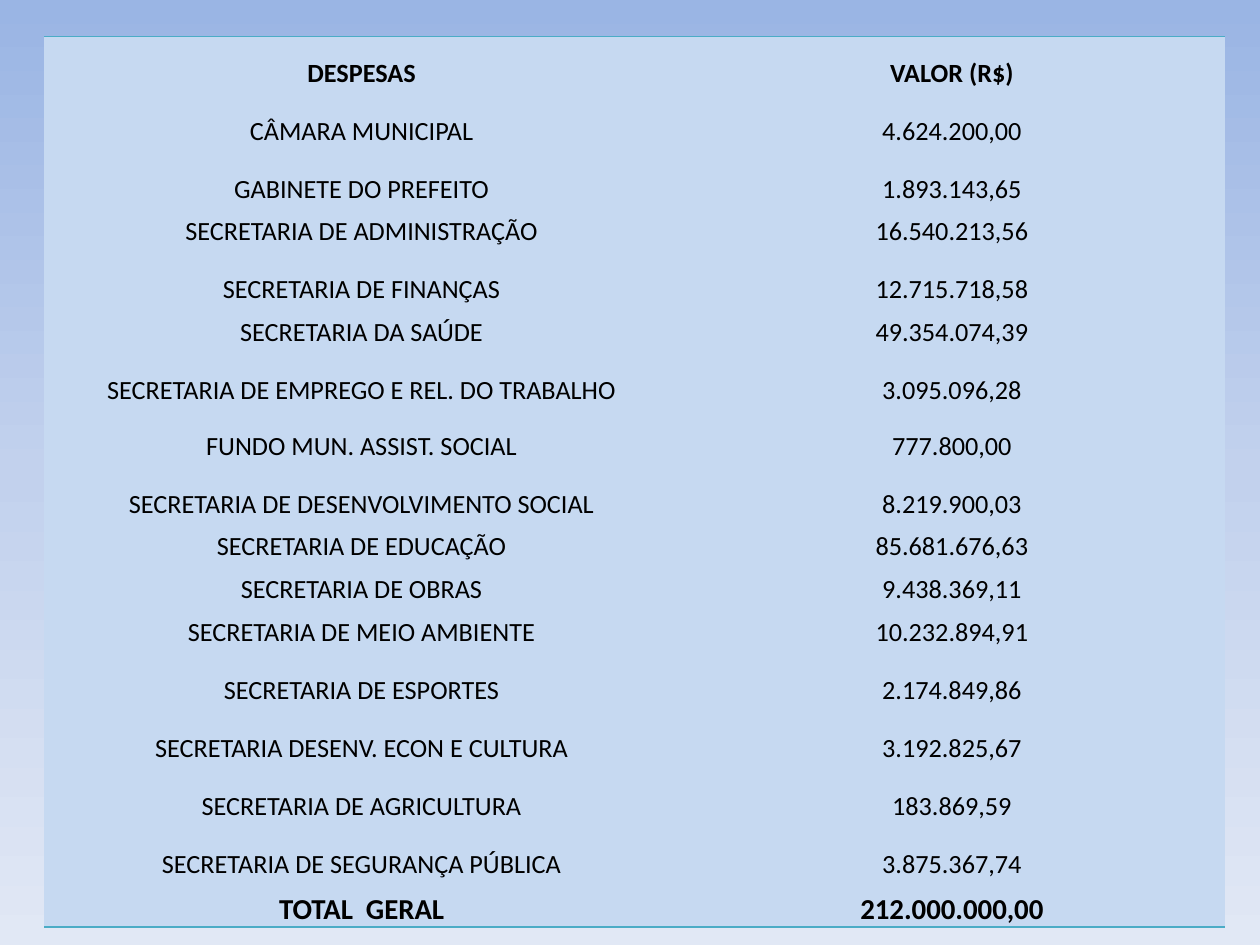
from copy import deepcopy
from dataclasses import dataclass

from lxml import etree
from pptx import Presentation
from pptx.dml.color import RGBColor
from pptx.enum.text import MSO_ANCHOR, PP_ALIGN
from pptx.oxml.ns import qn
from pptx.util import Inches, Pt

BOTTOM = MSO_ANCHOR.BOTTOM
CENTER = PP_ALIGN.CENTER
PLAIN_TABLE_STYLE = "{2D5ABB26-0587-4C30-8999-92F81FD0307C}"


@dataclass(frozen=True)
class Theme:
    font: str = "Calibri"
    body_size: float = 15
    total_size: float = 16.5
    text: str = "000000"
    cell: str = "C6D9F1"
    border: str = "4BACC6"
    border_width: float = 1
    background: tuple = ((0, "9AB5E4"), (0.5, "C2D1ED"), (1, "E1E8F5"))


THEME = Theme()
SLIDE_WIDTH, SLIDE_HEIGHT = Inches(10), Inches(7.5)
TABLE_LEFT, TABLE_TOP = Inches(0.35), Inches(0.29)
COLUMN_WIDTHS = (5.04, 4.33)
CELL_INSET = Inches(0.01)
HEADER, TALL, MEDIUM, SHORT, TOTAL = 0.42, 0.46, 0.44, 0.34, 0.37

EXPENSES = (
    ("DESPESAS", "VALOR (R$)", HEADER),
    ("CÂMARA MUNICIPAL", "4.624.200,00", TALL),
    ("GABINETE DO PREFEITO", "1.893.143,65", TALL),
    ("SECRETARIA DE ADMINISTRAÇÃO", "16.540.213,56", SHORT),
    ("SECRETARIA DE FINANÇAS", "12.715.718,58", TALL),
    ("SECRETARIA DA SAÚDE", "49.354.074,39", SHORT),
    ("SECRETARIA DE EMPREGO E REL. DO TRABALHO", "3.095.096,28", TALL),
    ("FUNDO MUN. ASSIST. SOCIAL", "777.800,00", MEDIUM),
    ("SECRETARIA DE DESENVOLVIMENTO SOCIAL", "8.219.900,03", TALL),
    ("SECRETARIA DE EDUCAÇÃO", "85.681.676,63", SHORT),
    ("SECRETARIA DE OBRAS", "9.438.369,11", SHORT),
    ("SECRETARIA DE MEIO AMBIENTE", "10.232.894,91", SHORT),
    ("SECRETARIA DE ESPORTES", "2.174.849,86", TALL),
    ("SECRETARIA DESENV. ECON E CULTURA", "3.192.825,67", TALL),
    ("SECRETARIA DE AGRICULTURA", "183.869,59", TALL),
    ("SECRETARIA DE SEGURANÇA PÚBLICA", "3.875.367,74", TALL),
    ("TOTAL  GERAL", "212.000.000,00", TOTAL),
)


def paint_background(slide):
    fill = slide.background.fill
    fill.gradient()
    fill.gradient_angle = 270
    stop_list = slide.element.find(".//" + qn("a:gsLst"))
    stop_list.append(deepcopy(stop_list[-1]))
    for stop, (position, color) in zip(fill.gradient_stops, THEME.background):
        stop.position = position
        stop.color.rgb = RGBColor.from_string(color)


def add_border(cell, side):
    line = etree.Element(qn("a:" + side), w=str(Pt(THEME.border_width)))
    solid = etree.SubElement(line, qn("a:solidFill"))
    etree.SubElement(solid, qn("a:srgbClr"), val=THEME.border)
    cell._tc.get_or_add_tcPr().insert(0, line)


def fill_cell(cell, text, size, bold):
    cell.fill.solid()
    cell.fill.fore_color.rgb = RGBColor.from_string(THEME.cell)
    cell.vertical_anchor = BOTTOM
    cell.margin_left = cell.margin_right = cell.margin_top = CELL_INSET
    cell.margin_bottom = 0
    cell.text_frame.text = text
    paragraph = cell.text_frame.paragraphs[0]
    paragraph.alignment = CENTER
    font = paragraph.runs[0].font
    font.name = THEME.font
    font.size = Pt(size)
    font.bold = bold
    font.color.rgb = RGBColor.from_string(THEME.text)


def add_expense_table(slide):
    width = Inches(sum(COLUMN_WIDTHS))
    height = Inches(sum(row[-1] for row in EXPENSES))
    shape = slide.shapes.add_table(
        len(EXPENSES), len(COLUMN_WIDTHS), TABLE_LEFT, TABLE_TOP, width, height
    )
    shape.element.find(".//" + qn("a:tableStyleId")).text = PLAIN_TABLE_STYLE
    table = shape.table
    table.first_row = table.horz_banding = False
    for column, column_width in zip(table.columns, COLUMN_WIDTHS):
        column.width = Inches(column_width)

    last = len(EXPENSES) - 1
    for index, (*texts, row_height) in enumerate(EXPENSES):
        row = table.rows[index]
        row.height = Inches(row_height)
        size = THEME.total_size if index == last else THEME.body_size
        for cell, text in zip(row.cells, texts):
            fill_cell(cell, text, size, index in (0, last))
    for top_cell, bottom_cell in zip(table.rows[0].cells, table.rows[last].cells):
        add_border(top_cell, "lnT")
        add_border(bottom_cell, "lnB")


def main():
    presentation = Presentation()
    presentation.slide_width = SLIDE_WIDTH
    presentation.slide_height = SLIDE_HEIGHT
    slide = presentation.slides.add_slide(presentation.slide_layouts[6])
    paint_background(slide)
    add_expense_table(slide)
    presentation.save("out.pptx")


if __name__ == "__main__":
    main()
